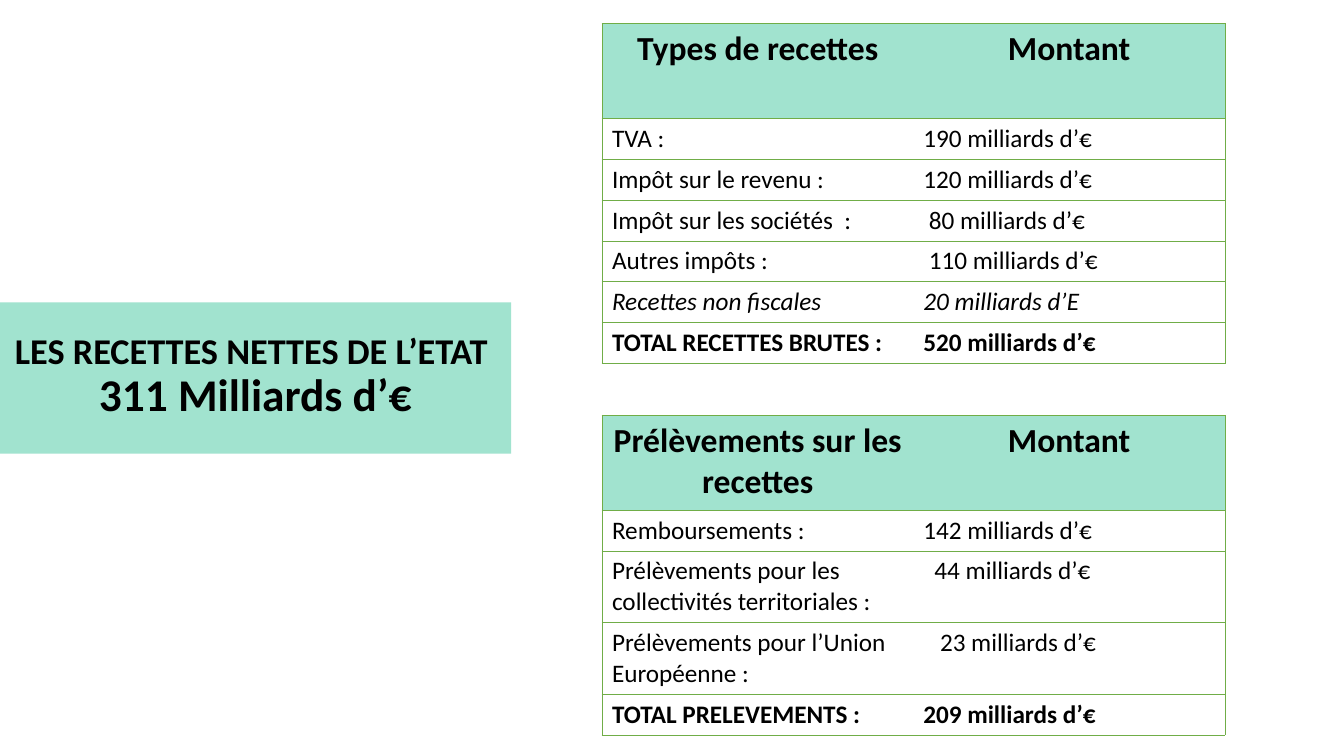
from typing import NamedTuple

import lxml.etree
import pptx
import pptx.dml.color
import pptx.enum.shapes
import pptx.enum.text
import pptx.oxml.ns
import pptx.util
from pptx.util import Cm, Pt

MINT, GREEN, BLACK = "A1E3CF", "70AD47", "000000"
COLUMN_WIDTH = 7.85
HEADER_HEIGHT, ROW_HEIGHT = 2.39, 1.03
TABLE_LEFT = 15.17
CELL_MARGIN, INDENT_STEP = 0.25, 0.14

HEADER = {"size": Pt(24), "bold": True, "italic": False}
PLAIN = {"size": Pt(18), "bold": False, "italic": False}
ITALIC = PLAIN | {"italic": True}
TOTAL = PLAIN | {"bold": True}


class Entry(NamedTuple):
    label: str
    amount: str
    style: dict = PLAIN
    indent: int = 0


class Ledger(NamedTuple):
    top: float
    heading: str
    entries: list[Entry]


LEDGERS = [
    Ledger(0.59, "Types de recettes", [
        Entry("TVA :", "190 milliards d’€"),
        Entry("Impôt sur le revenu :", "120 milliards d’€"),
        Entry("Impôt sur les sociétés  :", "80 milliards d’€", indent=1),
        Entry("Autres impôts :", "110 milliards d’€", indent=1),
        Entry("Recettes non fiscales", "20 milliards d’E", ITALIC),
        Entry("TOTAL RECETTES BRUTES :", "520 milliards d’€", TOTAL),
    ]),
    Ledger(10.46, "Prélèvements sur les recettes", [
        Entry("Remboursements :", "142 milliards d’€"),
        Entry("Prélèvements pour les collectivités territoriales :", "44 milliards d’€", indent=2),
        Entry("Prélèvements pour l’Union Européenne :", "23 milliards d’€", indent=3),
        Entry("TOTAL PRELEVEMENTS :", "209 milliards d’€", TOTAL),
    ]),
]


def color(value: str) -> pptx.dml.color.RGBColor:
    return pptx.dml.color.RGBColor.from_string(value)


def write(paragraph, text: str, style: dict, centered: bool) -> None:
    align = pptx.enum.text.PP_ALIGN
    paragraph.alignment = align.CENTER if centered else align.LEFT
    run = paragraph.add_run()
    run.text = text
    for attribute, value in (style | {"name": "Calibri"}).items():
        setattr(run.font, attribute, value)
    run.font.color.rgb = color(BLACK)


def set_borders(cell, inner_side: str) -> None:
    """Line every side of the cell except the one facing the other column."""
    properties = cell._tc.get_or_add_tcPr()
    qn = pptx.oxml.ns.qn
    for side in ("lnL", "lnR", "lnT", "lnB"):
        line = lxml.etree.SubElement(properties, qn(f"a:{side}"), w=str(Pt(0.5)))
        if side == inner_side:
            lxml.etree.SubElement(line, qn("a:noFill"))
        else:
            fill = lxml.etree.SubElement(line, qn("a:solidFill"))
            lxml.etree.SubElement(fill, qn("a:srgbClr"), val=GREEN)


def draw_ledger(slide, ledger: Ledger) -> None:
    rows = [Entry(ledger.heading, "Montant", HEADER), *ledger.entries]
    height = HEADER_HEIGHT + ROW_HEIGHT * len(ledger.entries)
    table = slide.shapes.add_table(len(rows), 2, Cm(TABLE_LEFT), Cm(ledger.top),
                                   Cm(2 * COLUMN_WIDTH), Cm(height)).table
    for column in table.columns:
        column.width = Cm(COLUMN_WIDTH)
    for index, entry in enumerate(rows):
        is_header = index == 0
        table.rows[index].height = Cm(HEADER_HEIGHT if is_header else ROW_HEIGHT)
        label, amount = table.cell(index, 0), table.cell(index, 1)
        amount.margin_left = Cm(CELL_MARGIN + INDENT_STEP * entry.indent)
        for cell, text, inner_side in ((label, entry.label, "lnR"), (amount, entry.amount, "lnL")):
            write(cell.text_frame.paragraphs[0], text, entry.style, is_header)
            set_borders(cell, inner_side)
            if is_header:
                cell.fill.solid()
                cell.fill.fore_color.rgb = color(MINT)
            else:
                cell.fill.background()


def draw_net_revenue(slide) -> None:
    banner = slide.shapes.add_shape(pptx.enum.shapes.MSO_SHAPE.RECTANGLE,
                                    Cm(0), Cm(7.62), Cm(12.88), Cm(3.81))
    banner.shadow.inherit = False
    banner.fill.solid()
    banner.fill.fore_color.rgb = color(MINT)
    banner.line.fill.background()
    frame = banner.text_frame
    layout = {"word_wrap": True, "vertical_anchor": pptx.enum.text.MSO_ANCHOR.BOTTOM,
              "margin_bottom": Cm(0.81)}
    for attribute, value in layout.items():
        setattr(frame, attribute, value)
    title, total = frame.paragraphs[0], frame.add_paragraph()
    for paragraph, text, size in ((title, "LES RECETTES NETTES DE L’ETAT ", 25.9),
                                  (total, "311 Milliards d’€", 32.4)):
        paragraph.line_spacing = 0.9
        write(paragraph, text, {"size": Pt(size), "bold": True}, centered=True)


def main() -> None:
    presentation = pptx.Presentation()
    presentation.slide_width, presentation.slide_height = Cm(33.87), Cm(19.05)
    slide = presentation.slides.add_slide(presentation.slide_layouts[6])
    draw_net_revenue(slide)
    for ledger in LEDGERS:
        draw_ledger(slide, ledger)
    presentation.save("out.pptx")


if __name__ == "__main__":
    main()
